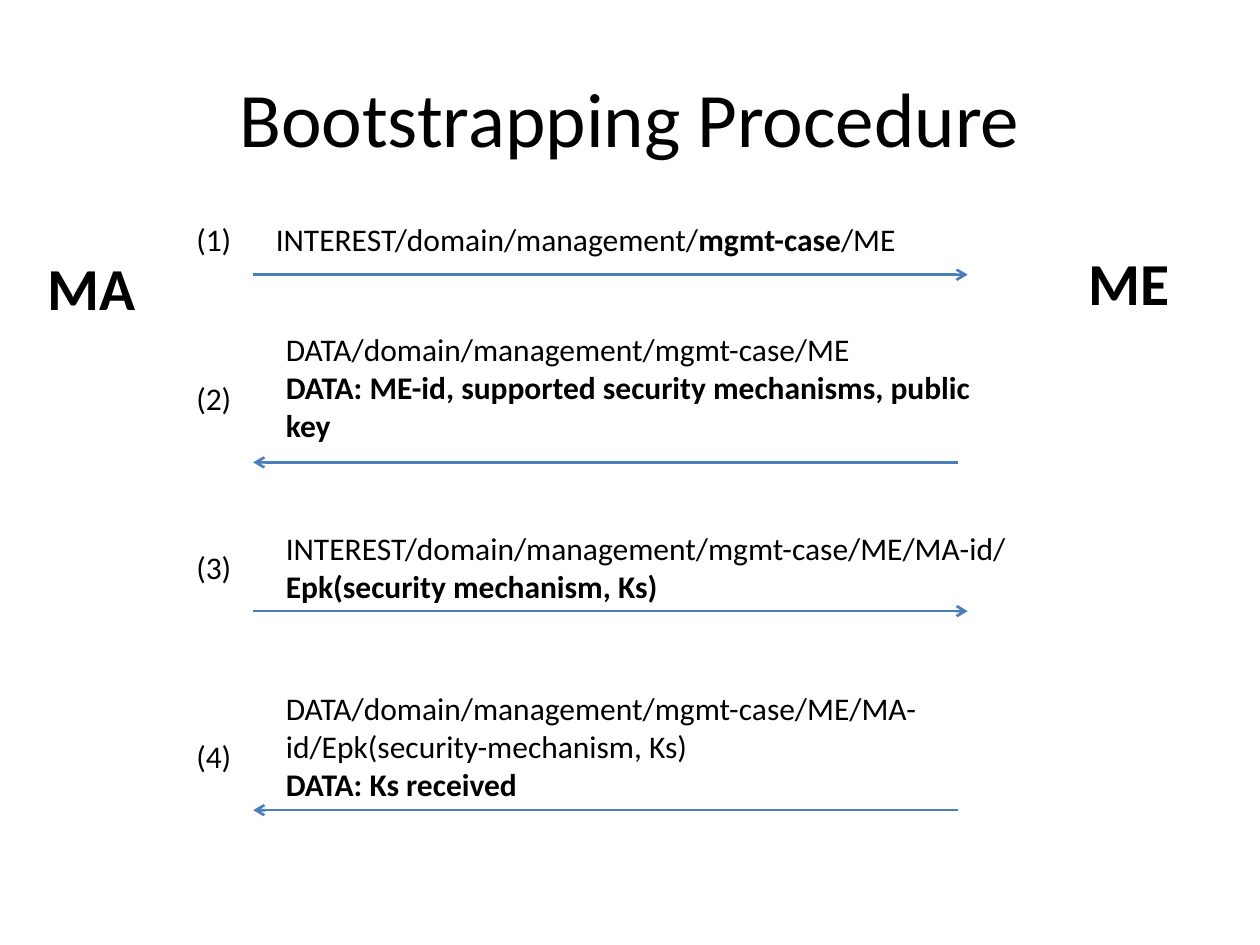
from lxml import etree
from pptx import Presentation
from pptx.dml.color import RGBColor
from pptx.enum import shapes, text
from pptx.oxml.ns import qn
from pptx.util import Pt

COLORS = {"text": "000000", "arrow": "4B7EBC"}
FONT = "Calibri"
MA_SIDE = 144.72
NUMBER_LEFT = 105.12
TO_ME, TO_MA = (MA_SIDE, 552.96), (547.2, MA_SIDE)

# Each step: number top, message box (left, top, width, height),
# paragraphs of (wording, bold) runs, arrow ends, arrow height
STEPS = [
    (122.4, (150.48, 122.4, 396.72, 28.8),
     [[("INTEREST/domain/management/", False), ("mgmt-case", True), ("/ME", False)]],
     TO_ME, 156.96),
    (213.12, (156.24, 185.04, 430.56, 72.72),
     [[("DATA/domain/management/mgmt-case/ME", False)],
      [("DATA: ME-id, supported security mechanisms, public key", True)]],
     TO_MA, 264.24),
    (309.6, (156.24, 298.8, 436.32, 51.12),
     [[("INTEREST/domain/management/mgmt-case/ME/MA-id/", False),
       ("Epk(security mechanism, Ks)", True)]],
     TO_ME, 349.2),
    (417.6, (156.24, 390.24, 396.72, 72.72),
     [[("DATA/domain/management/mgmt-case/ME/MA-id/Epk(security-mechanism, Ks)", False)],
      [("DATA: Ks received", True)]],
     TO_MA, 462.96),
]


def add_text(slide, box, paragraphs, size=18, align=text.PP_ALIGN.LEFT,
             anchor=text.MSO_ANCHOR.TOP):
    frame = slide.shapes.add_textbox(*map(Pt, box)).text_frame
    frame.word_wrap = True
    frame.vertical_anchor = anchor
    for i, runs in enumerate(paragraphs):
        paragraph = frame.add_paragraph() if i else frame.paragraphs[0]
        paragraph.alignment = align
        for wording, bold in runs:
            run = paragraph.add_run()
            run.text = wording
            run.font.name = FONT
            run.font.size = Pt(size)
            run.font.bold = bold
            run.font.color.rgb = RGBColor.from_string(COLORS["text"])


def add_arrow(slide, start, end, y):
    arrow = slide.shapes.add_connector(
        shapes.MSO_CONNECTOR.STRAIGHT, Pt(start), Pt(y), Pt(end), Pt(y))
    arrow.line.width = Pt(1.5)
    arrow.line.color.rgb = RGBColor.from_string(COLORS["arrow"])
    etree.SubElement(arrow.line._get_or_add_ln(), qn("a:tailEnd"), type="arrow")
    etree.SubElement(arrow._element.spPr, qn("a:effectLst"))


def add_step(slide, number, number_top, message_box, message, ends, arrow_y):
    add_text(slide, (NUMBER_LEFT, number_top, 79.2, 28.8), [[(f"({number})", False)]])
    add_text(slide, message_box, message)
    add_arrow(slide, *ends, arrow_y)


def main():
    deck = Presentation()
    deck.slide_width, deck.slide_height = Pt(720), Pt(540)
    slide = deck.slides.add_slide(deck.slide_layouts[6])

    # Title
    add_text(slide, (36, 21.6, 648, 90), [[("Bootstrapping Procedure", False)]],
             size=44, align=text.PP_ALIGN.CENTER, anchor=text.MSO_ANCHOR.MIDDLE)

    # The two parties
    for party, left, top in (("MA", 20.16, 139.68), ("ME", 614.88, 136.8)):
        add_text(slide, (left, top, 67.68, 48.24), [[(party, True)]], size=34)

    # Message exchange
    for number, step in enumerate(STEPS, start=1):
        add_step(slide, number, *step)

    deck.save("out.pptx")


if __name__ == "__main__":
    main()
